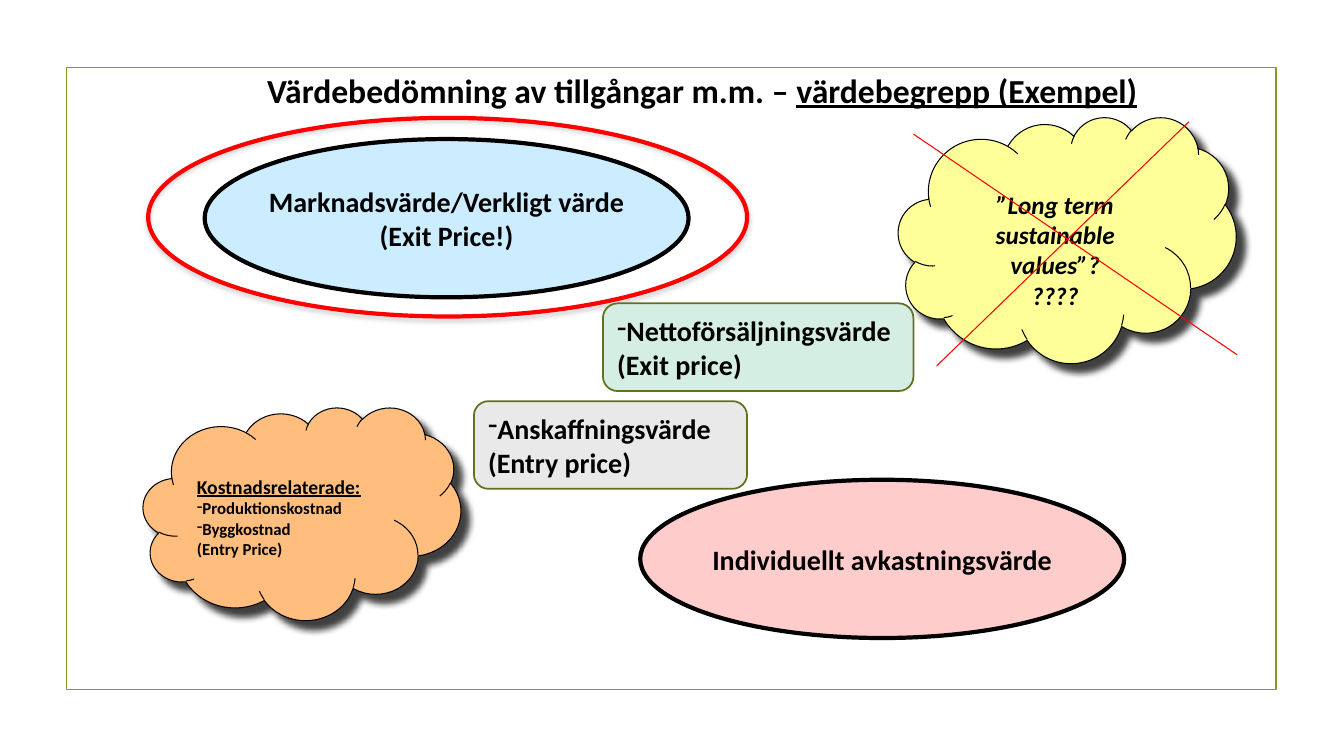
import pptx
import pptx.util
import pptx.dml.color
import pptx.enum.shapes
import pptx.enum.text
import pptx.oxml
import pptx.oxml.ns

Inches = pptx.util.Inches
Pt = pptx.util.Pt
RGBColor = pptx.dml.color.RGBColor
Shape = pptx.enum.shapes.MSO_SHAPE
Anchor = pptx.enum.text.MSO_ANCHOR
Align = pptx.enum.text.PP_ALIGN

BLACK = RGBColor(0x00, 0x00, 0x00)
RED = RGBColor(0xFF, 0x00, 0x00)
GREY = RGBColor(0x80, 0x80, 0x80)
FRAME_GREEN = RGBColor(0x83, 0x99, 0x2A)
DARK_GREEN = RGBColor(0x61, 0x71, 0x1F)
SKY = RGBColor(0xCC, 0xEC, 0xFF)
PINK = RGBColor(0xFF, 0xCC, 0xCC)
ORANGE = RGBColor(0xFF, 0xBE, 0x7D)
YELLOW = RGBColor(0xFF, 0xFF, 0x99)
MINT = RGBColor(0xD4, 0xEE, 0xE3)
PALE_GREY = RGBColor(0xE9, 0xE9, 0xE9)


def add_figure(page, kind, box, fill, line, width):
    figure = page.shapes.add_shape(kind, *map(Inches, box))
    if fill is None:
        figure.fill.background()
    else:
        figure.fill.solid()
        figure.fill.fore_color.rgb = fill
    figure.line.color.rgb = line
    figure.line.width = Pt(width)
    figure.shadow.inherit = False
    return figure


def add_shadow(figure, color, opacity, blur, distance, angle):
    effects = figure._element.spPr.find(pptx.oxml.ns.qn("a:effectLst"))
    effects.append(pptx.oxml.parse_xml(
        f'<a:outerShdw {pptx.oxml.ns.nsdecls("a")} blurRad="{Pt(blur)}" '
        f'dist="{Pt(distance)}" dir="{angle * 60000}" algn="ctr" rotWithShape="0">'
        f'<a:srgbClr val="{color}"><a:alpha val="{opacity * 1000}"/></a:srgbClr>'
        '</a:outerShdw>'))


def add_span(para, text, size, underline=False, italic=False):
    span = para.add_run()
    span.text = text
    font = span.font
    font.name = "Calibri"
    font.size = Pt(size)
    font.bold = True
    font.italic = italic
    font.underline = underline
    font.color.rgb = BLACK


def write_lines(figure, lines, align, anchor):
    frame = figure.text_frame
    frame.vertical_anchor = anchor
    for index, (text, size, style) in enumerate(lines):
        para = frame.add_paragraph() if index else frame.paragraphs[0]
        para.alignment = align
        if style.get("dash"):
            properties = para._p.get_or_add_pPr()
            properties.set("marL", "0")
            properties.set("indent", "0")
            properties.append(pptx.oxml.parse_xml(
                f'<a:buChar {pptx.oxml.ns.nsdecls("a")} char="-"/>'))
        add_span(para, text, size, style.get("underline", False),
                 style.get("italic", False))


def place_title(page, box):
    title = page.shapes.title
    title.left, title.top, title.width, title.height = map(Inches, box)
    frame = title.text_frame
    frame.word_wrap = False
    frame.vertical_anchor = Anchor.TOP
    para = frame.paragraphs[0]
    para.alignment = Align.LEFT
    add_span(para, "Värdebedömning av tillgångar m.m. – ", 24)
    add_span(para, "värdebegrepp (Exempel)", 24, underline=True)


def place_ellipse(page, box, fill, texts):
    ellipse = add_figure(page, Shape.OVAL, box, fill, BLACK, 3)
    ellipse.text_frame.word_wrap = False
    write_lines(ellipse, [(text, 20, {}) for text in texts],
                Align.CENTER, Anchor.MIDDLE)


def place_cloud(page, box, fill, lines, align):
    cloud = add_figure(page, Shape.CLOUD, box, fill, BLACK, 0.75)
    add_shadow(cloud, BLACK, 75, 5, 8.5, 45)
    cloud.text_frame.word_wrap = True
    cloud.text_frame.margin_top = Inches(0.35)
    write_lines(cloud, lines, align, Anchor.TOP)


def place_price_card(page, box, fill, text):
    card = add_figure(page, Shape.ROUNDED_RECTANGLE, box, fill, DARK_GREEN, 1.25)
    card.text_frame.word_wrap = True
    write_lines(card, [(text, 20, {"dash": True})], Align.LEFT, Anchor.MIDDLE)


def place_cross(page, box):
    left, top, width, height = box
    strokes = [((0, 0.12), (3.21, 2.31)), ((2.73, 0), (0.23, 2.42))]
    for (start_x, start_y), (end_x, end_y) in strokes:
        stroke = page.shapes.add_connector(
            pptx.enum.shapes.MSO_CONNECTOR.STRAIGHT,
            Inches(left + start_x), Inches(top + start_y),
            Inches(left + end_x), Inches(top + end_y))
        stroke.line.color.rgb = RED
        stroke.line.width = Pt(0.75)
        stroke._element.spPr.append(pptx.oxml.parse_xml(
            f'<a:effectLst {pptx.oxml.ns.nsdecls("a")}/>'))


def build_values_page(deck):
    page = deck.slides.add_slide(deck.slide_layouts[5])
    add_figure(page, Shape.RECTANGLE, (0.66, 0.67, 12, 6.17), None, FRAME_GREEN, 1.25)
    place_ellipse(page, (2.03, 1.38, 4.8, 1.57), SKY,
                  ["Marknadsvärde/Verkligt värde", "(Exit Price!)"])
    place_ellipse(page, (6.35, 4.76, 4.8, 1.57), PINK,
                  ["Individuellt avkastningsvärde"])
    place_title(page, (2.55, 0.64, 8.92, 0.5))
    place_cloud(page, (1.42, 4.04, 3.15, 2.11), ORANGE,
                [("Kostnadsrelaterade:", 14, {"underline": True}),
                 ("Produktionskostnad", 12, {"dash": True}),
                 ("Byggkostnad", 12, {"dash": True}),
                 ("(Entry Price)", 12, {})], Align.LEFT)
    place_cloud(page, (8.91, 1.16, 3.35, 2.44), YELLOW,
                [("”Long term sustainable values”?", 18, {"italic": True}),
                 ("????", 18, {"italic": True})], Align.CENTER)
    place_cross(page, (9.06, 1.21, 3.21, 2.42))
    place_price_card(page, (4.7, 3.98, 2.71, 0.87), PALE_GREY,
                     "Anskaffningsvärde (Entry price)")
    ring = add_figure(page, Shape.OVAL, (1.47, 1.17, 5.94, 1.97), None, RED, 3)
    add_shadow(ring, GREY, 35, 3.1, 1.8, 90)
    place_price_card(page, (5.98, 3.01, 3.08, 0.87), MINT,
                     "Nettoförsäljningsvärde (Exit price)")


def main():
    deck = pptx.Presentation()
    deck.slide_width = Inches(13.33)
    deck.slide_height = Inches(7.5)
    build_values_page(deck)
    deck.save("out.pptx")


if __name__ == "__main__":
    main()
